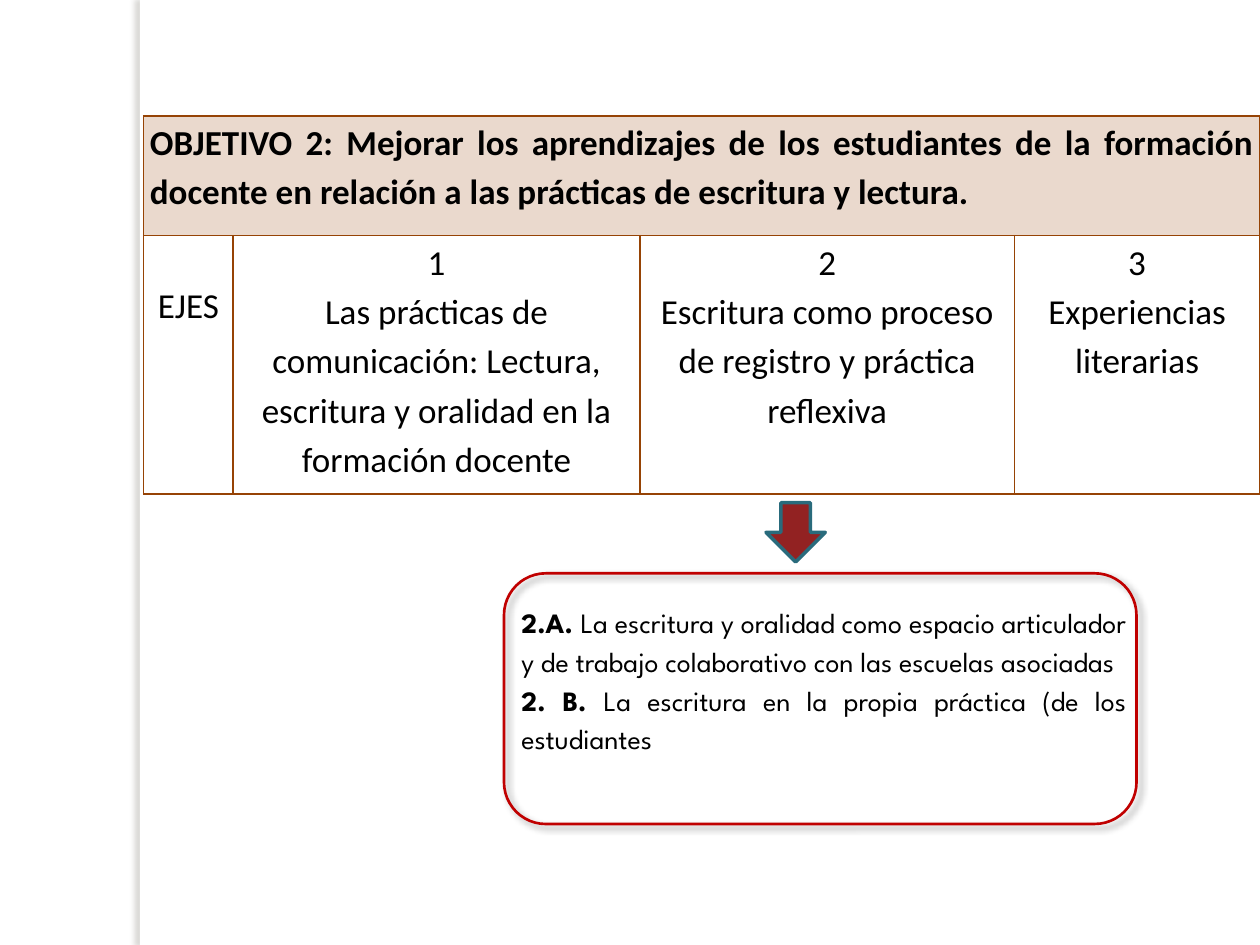
from dataclasses import dataclass
from typing import NamedTuple

from lxml.etree import SubElement
from pptx import Presentation
from pptx.dml.color import RGBColor
from pptx.enum.shapes import MSO_SHAPE
from pptx.enum.text import PP_ALIGN
from pptx.oxml.ns import qn
from pptx.util import Emu, Inches, Pt


@dataclass(frozen=True)
class Theme:
    paper: str = "FFFFFF"
    ink: str = "000000"
    rule: str = "964305"
    header: str = "EAD9CD"
    frame: str = "C00000"
    arrow: str = "922222"
    arrow_line: str = "296B7C"
    edge_shadow: str = "736F63"
    table_font: str = "Calibri"
    note_font: str = "League Spartan"
    table_size: int = 20
    note_size: int = 16
    spacing: float = 1.15


class Box(NamedTuple):
    """Left, top, width and height as shares of the slide."""
    left: float
    top: float
    width: float
    height: float


class Shadow(NamedTuple):
    color: str
    alpha: int
    blur: int
    distance: int
    angle: int


class Axis(NamedTuple):
    lines: list[str]
    width: float
    top: float = 0


THEME = Theme()
WIDTH, HEIGHT = Inches(10), Inches(7.5)
ROWS = (0.95, 2.05)
OBJECTIVE = ("OBJETIVO 2: Mejorar los aprendizajes de los estudiantes de la "
             "formación docente en relación a las prácticas de escritura y lectura.")
AXES = [
    Axis(["EJES"], 0.71, 0.34),
    Axis(["1", "Las prácticas de comunicación: Lectura, escritura y oralidad "
          "en la formación docente"], 3.23),
    Axis(["2", "Escritura como proceso de registro y práctica reflexiva"], 2.97),
    Axis(["3", "Experiencias literarias"], 1.95),
]
NOTES = [
    ("2.A. ", "La escritura y oralidad como espacio articulador y de trabajo "
     "colaborativo con las escuelas asociadas"),
    ("2. B. ", "La escritura en la propia práctica (de los estudiantes"),
]


def rgb(color: str) -> RGBColor:
    return RGBColor.from_string(color)


def place(box: Box) -> list[Emu]:
    return [Emu(round(share * side))
            for share, side in zip(box, (WIDTH, HEIGHT) * 2)]


def add_paragraph(tf, index: int, parts, align, font: str, size: int) -> None:
    """Write (text, bold) parts, reusing the frame's first paragraph."""
    p = tf.add_paragraph() if index else tf.paragraphs[0]
    p.alignment, p.line_spacing = align, THEME.spacing
    for text, bold in parts:
        r = p.add_run()
        r.text = text
        r.font.name, r.font.size, r.font.bold = font, Pt(size), bold
        r.font.color.rgb = rgb(THEME.ink)


def add_figure(s, kind, box: Box, fill: str | None = None, line: str | None = None,
               weight: float = 1, shadow: Shadow | None = None) -> None:
    sp = s.shapes.add_shape(kind, *place(box))
    if fill:
        sp.fill.solid()
        sp.fill.fore_color.rgb = rgb(fill)
    else:
        sp.fill.background()
    if line:
        sp.line.color.rgb = rgb(line)
        sp.line.width = Pt(weight)
    else:
        sp.line.fill.background()
    sp.shadow.inherit = False
    if shadow:
        effects = sp._element.spPr.find(qn("a:effectLst"))
        outer = SubElement(effects, qn("a:outerShdw"), blurRad=str(Pt(shadow.blur)),
                           dist=str(Pt(shadow.distance)), dir=str(shadow.angle * 60000),
                           algn="ctr", rotWithShape="0")
        color = SubElement(outer, qn("a:srgbClr"), val=shadow.color)
        SubElement(color, qn("a:alpha"), val=str(shadow.alpha * 1000))


def format_cell(cell, lines: list[str], align, fill: str | None = None,
                bold: bool = False, top: float = 0) -> None:
    cell.margin_left = cell.margin_right = Inches(0.05)
    cell.margin_top, cell.margin_bottom = Inches(top), 0
    tcPr = cell._tc.get_or_add_tcPr()
    for side in ("lnL", "lnR", "lnT", "lnB"):
        border = SubElement(tcPr, qn(f"a:{side}"), w=str(Pt(1)))
        SubElement(SubElement(border, qn("a:solidFill")), qn("a:srgbClr"), val=THEME.rule)
    if fill:
        cell.fill.solid()
        cell.fill.fore_color.rgb = rgb(fill)
    else:
        cell.fill.background()
    for i, line in enumerate(lines):
        add_paragraph(cell.text_frame, i, [(line, bold)], align,
                      THEME.table_font, THEME.table_size)


def add_axes_table(s, box: Box) -> None:
    table = s.shapes.add_table(len(ROWS), len(AXES), *place(box)).table
    table.horz_banding = table.first_row = False
    for row, height in zip(table.rows, ROWS):
        row.height = Inches(height)
    for i, axis in enumerate(AXES):
        table.columns[i].width = Inches(axis.width)
        format_cell(table.cell(0, i), [OBJECTIVE] if i == 0 else [],
                    PP_ALIGN.JUSTIFY, THEME.header, bold=True)
        format_cell(table.cell(1, i), axis.lines, PP_ALIGN.CENTER, top=axis.top)
    table.cell(0, 0).merge(table.cell(0, len(AXES) - 1))


def add_notes(s, box: Box) -> None:
    tf = s.shapes.add_textbox(*place(box)).text_frame
    tf.word_wrap = True
    for i, (label, text) in enumerate(NOTES):
        add_paragraph(tf, i, [(label, True), (text, False)], PP_ALIGN.JUSTIFY,
                      THEME.note_font, THEME.note_size)


def main() -> None:
    prs = Presentation()
    prs.slide_width, prs.slide_height = WIDTH, HEIGHT
    s = prs.slides.add_slide(prs.slide_layouts[6])
    s.background.fill.solid()
    s.background.fill.fore_color.rgb = rgb(THEME.paper)
    add_figure(s, MSO_SHAPE.RECTANGLE, Box(0.111, 0, 0.008, 1), fill=THEME.paper,
               shadow=Shadow(THEME.edge_shadow, 25, 3, 3, 180))
    add_axes_table(s, Box(0.114, 0.1227, 0.886, 0.4))
    add_notes(s, Box(0.404, 0.6293, 0.5, 0.22))
    add_figure(s, MSO_SHAPE.ROUNDED_RECTANGLE, Box(0.4, 0.6067, 0.502, 0.2653),
               line=THEME.frame, weight=1.5, shadow=Shadow(THEME.ink, 40, 4, 3, 45))
    add_figure(s, MSO_SHAPE.DOWN_ARROW, Box(0.608, 0.532, 0.047, 0.0627),
               fill=THEME.arrow, line=THEME.arrow_line, weight=2)
    prs.save("out.pptx")


if __name__ == "__main__":
    main()
